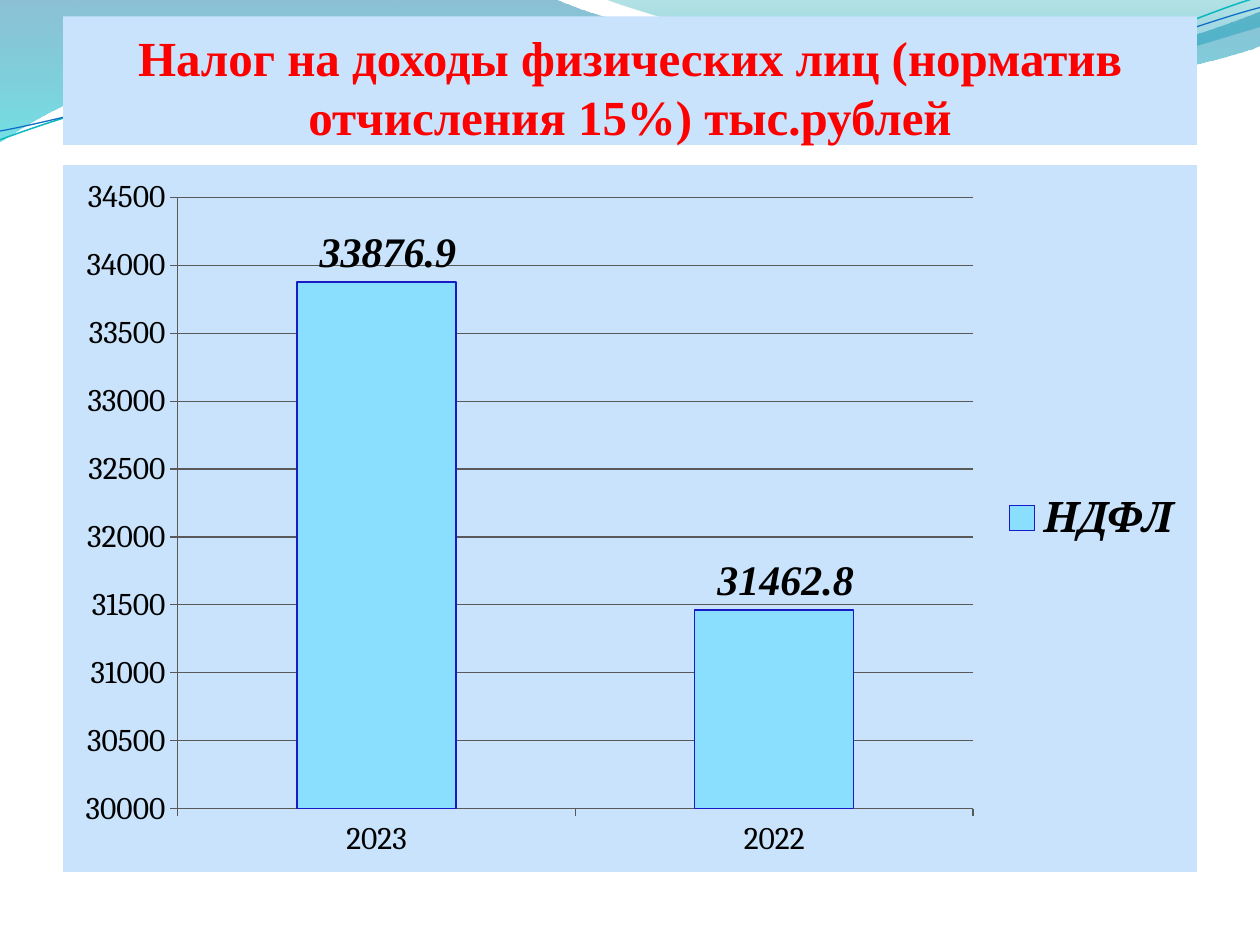
"""Build a slide with a column chart of personal income tax revenue."""
from lxml import etree
from pptx import Presentation
from pptx import util as u
from pptx.chart.data import CategoryChartData
from pptx.dml.color import RGBColor
from pptx.enum import chart as charts, text
from pptx.oxml import ns, parse_xml

TITLE = "Налог на доходы физических лиц (норматив отчисления 15%) тыс.рублей"
SERIES = "НДФЛ"
YEARS = ("2023", "2022")
VALUES = (33876.9, 31462.8)
LABEL_SHIFT = 0.01
PANEL, SERIF, GREY = "C8E3FB", "Times New Roman", "595959"

BANDS = [
    {"points": [(0, 0), [(4.4, -0.01)],
                [(4.76, 0.17), (6.64, 0.63), (7.58, 0.63)],
                [(8.53, 0.63), (9.58, 0.26), (10, 0.09)], [(10.01, 0.36)],
                [(9.83, 0.44), (8.7, 0.76), (7.46, 0.75)],
                [(6.22, 0.75), (3.82, 0.28), (2.57, 0.34)],
                [(1.29, 0.36), (0.46, 0.83), (-0.01, 1.13)]],
     "stops": [(0, "0074A1", 45), (100, "00C6CF", 55)]},
    {"points": [(4.79, -0.01), [(5.09, 0.11), (6.82, 0.62), (7.69, 0.65)],
                [(8.56, 0.69), (9.61, 0.32), (10, 0.21)], [(10, 0)]],
     "stops": [(0, "00A1A9", 30), (80, "008BBF", 45)]},
]
WAVES = [
    {"points": [(0, 1.11), [(0.48, 0.93), (1.58, 0.57), (2.77, 0.52)],
                [(3.95, 0.47), (5.93, 0.89), (7.13, 0.8)],
                [(8.33, 0.71), (9.38, 0.15), (9.98, -0.02)]],
     "line": ("0AB8BF", 0.85)},
    {"points": [(0, 1.04), [(0.47, 0.96), (1.64, 0.61), (2.83, 0.56)],
                [(4.03, 0.51), (5.97, 0.84), (7.17, 0.75)],
                [(8.36, 0.67), (9.41, 0.21), (10, 0.06)]],
     "line": ("0F6FC6", 0.75)},
]


def color(hex_value):
    return RGBColor.from_string(hex_value)


def paint(fill, hex_value):
    fill.solid()
    fill.fore_color.rgb = color(hex_value)


def stroke(line, hex_value, width):
    line.color.rgb = color(hex_value)
    line.width = u.Pt(width)


def style(font, size, name, hex_value="000000", bold=False, italic=False):
    font.size, font.name = u.Pt(size), name
    font.bold, font.italic = bold, italic
    font.color.rgb = color(hex_value)


def add_curve(slide, points, closed):
    start, *segments = points
    builder = slide.shapes.build_freeform(*map(u.Inches, start))
    for segment in segments:
        builder.add_line_segments([tuple(map(u.Inches, point)) for point in segment],
                                  close=closed and segment is segments[-1])
    curve = builder.convert_to_shape()
    curve.shadow.inherit = False
    lines = iter(list(curve.element.iter(ns.qn("a:lnTo"))))
    for segment in segments:
        parts = [next(lines) for _ in segment]
        if len(parts) == 3:
            bezier = etree.Element(ns.qn("a:cubicBezTo"))
            parts[0].addprevious(bezier)
            for part in parts:
                bezier.append(part[0])
                part.getparent().remove(part)
    return curve


def add_band(slide, points, stops):
    band = add_curve(slide, points, True)
    band.line.fill.background()
    marks = "".join(
        f'<a:gs pos="{place * 1000}"><a:srgbClr val="{shade}">'
        f'<a:alpha val="{alpha * 1000}"/></a:srgbClr></a:gs>'
        for place, shade, alpha in stops)
    gradient = parse_xml(f'<a:gradFill {ns.nsdecls("a")}><a:gsLst>{marks}</a:gsLst>'
                         '<a:lin ang="5400000" scaled="0"/></a:gradFill>')
    band.element.spPr.find(ns.qn("a:custGeom")).addnext(gradient)


def add_wave(slide, points, line):
    wave = add_curve(slide, points, False)
    wave.fill.background()
    stroke(wave.line, *line)


def add_title(slide):
    title = slide.shapes.title
    title.element.getparent().append(title.element)
    title.left, title.top = u.Inches(0.5), u.Inches(0.13)
    title.width, title.height = u.Inches(9), u.Inches(1.02)
    paint(title.fill, PANEL)
    frame = title.text_frame
    frame.text = TITLE
    frame.auto_size = text.MSO_AUTO_SIZE.NONE
    frame.vertical_anchor = text.MSO_ANCHOR.BOTTOM
    frame.margin_left = frame.margin_right = frame.margin_bottom = 0
    frame.margin_top = u.Inches(0.05)
    para = frame.paragraphs[0]
    para.alignment = text.PP_ALIGN.CENTER
    style(para.runs[0].font, 28, SERIF, "FF0000", bold=True)


def fill_chart_area(chart):
    area = parse_xml(f'<c:spPr {ns.nsdecls("c", "a")}><a:solidFill>'
                     f'<a:srgbClr val="{PANEL}"/></a:solidFill>'
                     '<a:ln><a:noFill/></a:ln></c:spPr>')
    chart.element.find(ns.qn("c:chart")).addnext(area)


def shift_labels(chart):
    for label in chart.element.iter(ns.qn("c:dLbl")):
        label.find(ns.qn("c:idx")).addnext(parse_xml(
            f'<c:layout {ns.nsdecls("c")}><c:manualLayout><c:x val="{LABEL_SHIFT}"/>'
            '<c:y val="0"/></c:manualLayout></c:layout>'))


def add_tax_chart(slide):
    data = CategoryChartData()
    data.categories = YEARS
    data.add_series(SERIES, VALUES)
    chart = slide.shapes.add_chart(
        charts.XL_CHART_TYPE.COLUMN_CLUSTERED, u.Inches(0.5), u.Inches(1.31),
        u.Inches(9), u.Inches(5.61), data).chart
    style(chart.font, 18, "Cambria")
    chart.has_title = False
    chart.has_legend = True
    chart.legend.position = charts.XL_LEGEND_POSITION.RIGHT
    chart.legend.include_in_layout = False
    style(chart.legend.font, 24, "Cambria", bold=True, italic=True)

    for axis in (chart.category_axis, chart.value_axis):
        axis.major_tick_mark = charts.XL_TICK_MARK.OUTSIDE
        stroke(axis.format.line, GREY, 0.75)
    scale = chart.value_axis
    scale.minimum_scale, scale.maximum_scale, scale.major_unit = 30000, 34500, 500
    scale.has_major_gridlines = True
    stroke(scale.major_gridlines.format.line, GREY, 0.75)

    plot = chart.plots[0]
    plot.gap_width, plot.vary_by_categories = 150, False
    bars = plot.series[0]
    paint(bars.format.fill, "8ADFFF")
    stroke(bars.format.line, "181CC7", 0.75)
    labels = bars.data_labels
    labels.show_value = True
    for place in (labels, *(bars.points[i].data_label for i in range(len(VALUES)))):
        style(place.font, 24, SERIF, bold=True, italic=True)
        place.position = charts.XL_LABEL_POSITION.OUTSIDE_END
    shift_labels(chart)
    fill_chart_area(chart)


def main():
    deck = Presentation()
    deck.slide_width, deck.slide_height = u.Inches(10), u.Inches(7.5)
    slide = deck.slides.add_slide(deck.slide_layouts[5])
    for band in BANDS:
        add_band(slide, **band)
    for wave in WAVES:
        add_wave(slide, **wave)
    add_title(slide)
    add_tax_chart(slide)
    deck.save("out.pptx")


if __name__ == "__main__":
    main()
